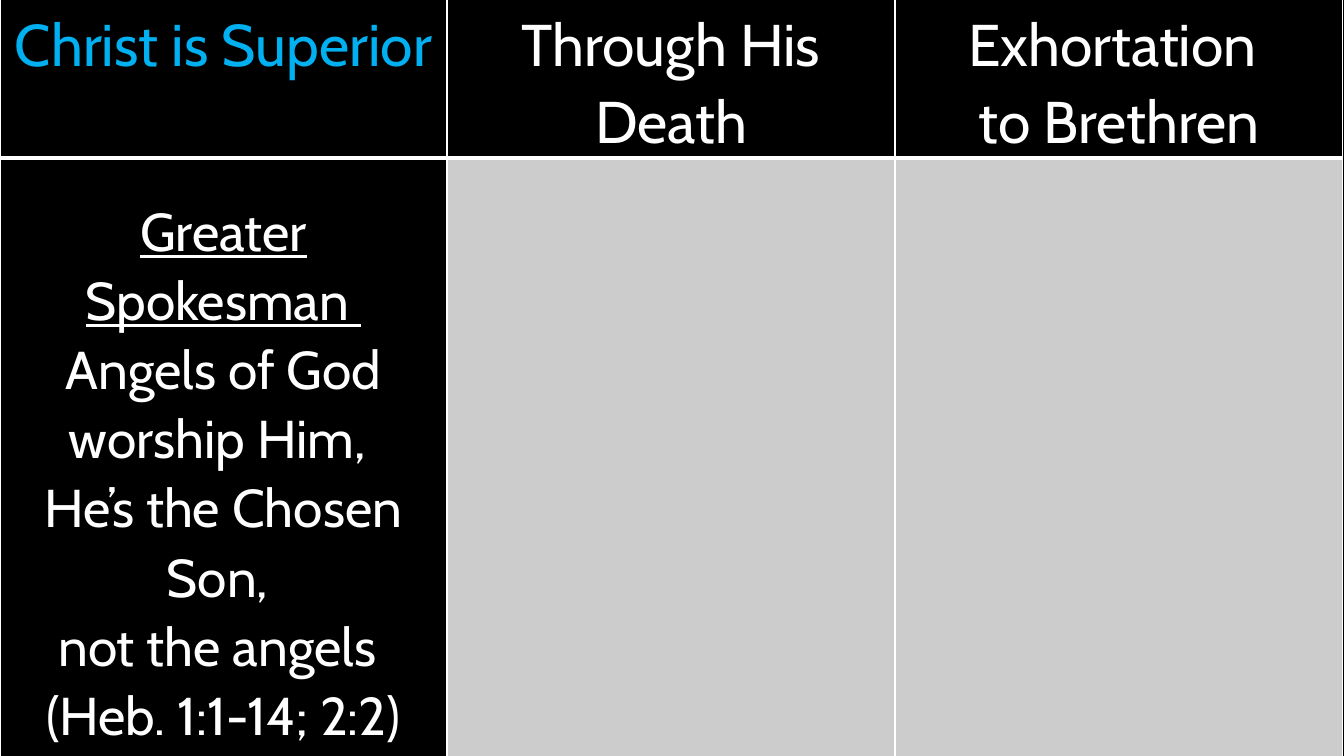
from lxml.etree import SubElement
from pptx import Presentation
from pptx.dml.color import RGBColor
from pptx.enum.text import PP_ALIGN
from pptx.oxml.ns import qn
from pptx.util import Pt

BLACK = RGBColor(0x00, 0x00, 0x00)
WHITE = RGBColor(0xFF, 0xFF, 0xFF)
BLUE = RGBColor(0x00, 0xB0, 0xF0)
GRAY = RGBColor(0xCC, 0xCC, 0xCC)


def px(n):
    return round(n * 914400 / 100.8)


def set_border(cell, side, points):
    ln = SubElement(cell._tc.get_or_add_tcPr(), qn(f"a:{side}"), w=str(Pt(points)))
    fill = SubElement(ln, qn("a:solidFill"))
    SubElement(fill, qn("a:srgbClr"), val=str(WHITE))


prs = Presentation()
prs.slide_width, prs.slide_height = px(1344), px(756)
s = prs.slides.add_slide(prs.slide_layouts[6])
s.background.fill.solid()
s.background.fill.fore_color.rgb = BLACK

# Paragraphs of each cell, row by row
ROWS = [
    [["Christ is Superior"], ["Through His Death"], ["Exhortation ", "to Brethren"]],
    [["Greater Spokesman ", "Angels of God worship Him, ", "He’s the Chosen Son, ",
      "not the angels ", "(Heb. 1:1-14; 2:2)"], [], []],
]
COL_WIDTHS = [447, 448, 448]
ROW_HEIGHTS = [170, 632]
TOP_MARGINS = [22, 37]
SIZES = [42, 38]

# Table grid
table = s.shapes.add_table(2, 3, 0, px(-17), px(sum(COL_WIDTHS)), px(sum(ROW_HEIGHTS))).table
for column, width in zip(table.columns, COL_WIDTHS):
    column.width = px(width)
for row, height in zip(table.rows, ROW_HEIGHTS):
    row.height = px(height)

# Cells: borders, fill and text
for i, row in enumerate(ROWS):
    for j, lines in enumerate(row):
        cell = table.cell(i, j)
        cell.margin_left = cell.margin_right = px(7)
        cell.margin_top, cell.margin_bottom = px(TOP_MARGINS[i]), 0
        # The rule between the heading row and the body is thicker
        for side in ("lnL", "lnR", "lnT", "lnB"):
            set_border(cell, side, 3 if (i, side) in ((0, "lnB"), (1, "lnT")) else 1)
        cell.fill.solid()
        cell.fill.fore_color.rgb = BLACK if lines else GRAY
        if not lines:
            continue
        tf = cell.text_frame
        tf.text = "\n".join(lines)
        for p in tf.paragraphs:
            p.alignment = PP_ALIGN.CENTER
            p.line_spacing = 1.07
            for r in p.runs:
                r.font.name = "Cabin"
                r.font.size = Pt(SIZES[i])
                r.font.bold = False
                r.font.color.rgb = WHITE

# Accents: blue first heading, underlined body title
table.cell(0, 0).text_frame.paragraphs[0].runs[0].font.color.rgb = BLUE
table.cell(1, 0).text_frame.paragraphs[0].runs[0].font.underline = True

prs.save("out.pptx")
